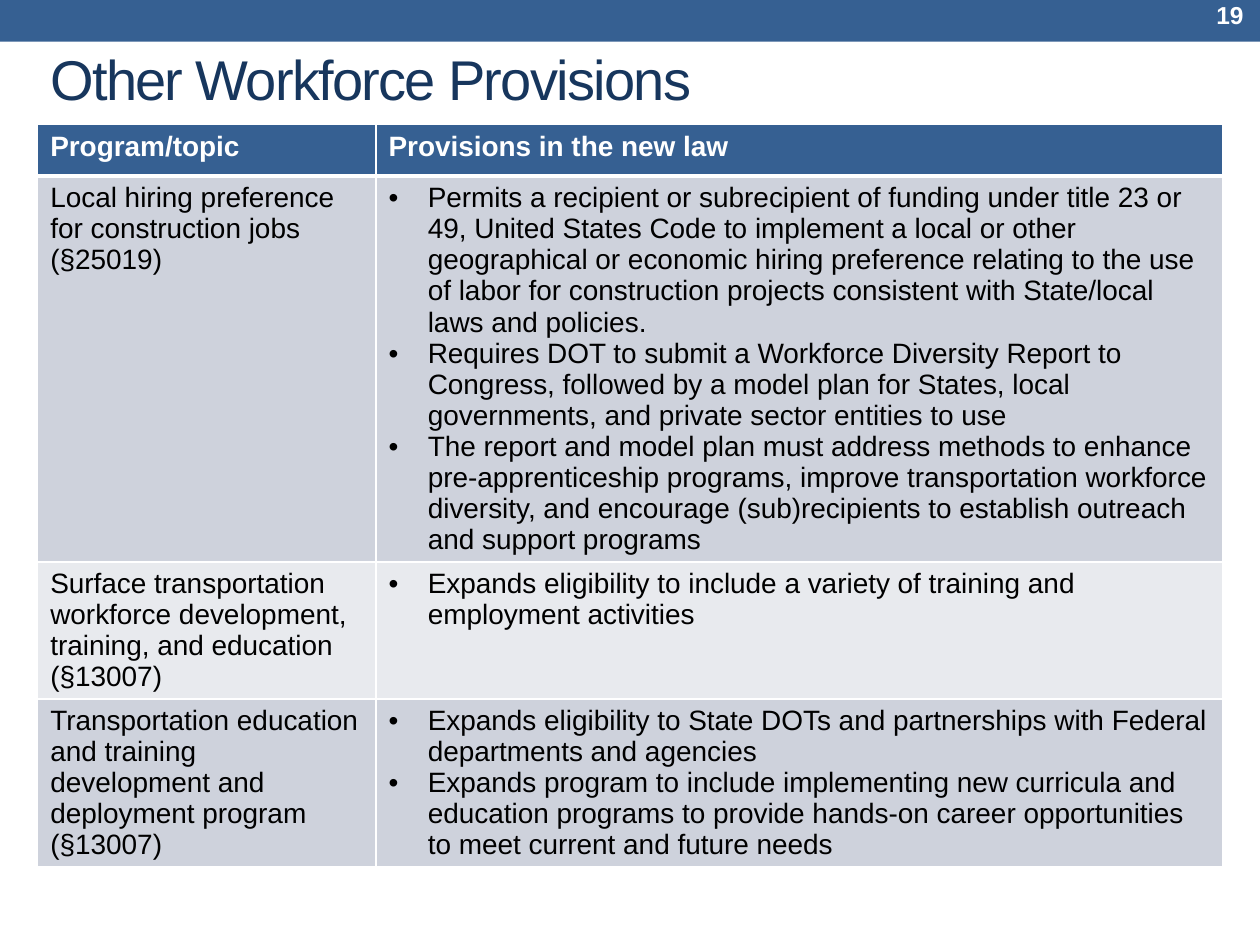
from lxml.etree import SubElement
from pptx import Presentation
from pptx.dml.color import RGBColor
from pptx.enum.shapes import MSO_SHAPE as Shape
from pptx.enum.text import MSO_ANCHOR as Anchor, MSO_AUTO_SIZE as AutoSize, PP_ALIGN as Align
from pptx.oxml.ns import qn
from pptx.util import Cm, Pt

FONT = "Arial"
BLUE, NAVY, WHITE, BLACK = "366092", "17365D", "FFFFFF", "000000"
BANDS = ["CED2DC", "E8EAEE"]
COLUMN_WIDTHS = [6.82, 17.06]
ROW_HEIGHT = 1.04
BULLET_INDENT = Cm(0.79)

HEADINGS = ["Program/topic", "Provisions in the new law"]
# Each program: name, section of the law, provisions
PROGRAMS = [
    ("Local hiring preference for construction jobs", "(§25019)", [
        "Permits a recipient or subrecipient of funding under title 23 or 49, United States Code "
        "to implement a local or other geographical or economic hiring preference relating to the "
        "use of labor for construction projects consistent with State/local laws and policies.",
        "Requires DOT to submit a Workforce Diversity Report to Congress, followed by a model plan "
        "for States, local governments, and private sector entities to use",
        "The report and model plan must address methods to enhance pre-apprenticeship programs, "
        "improve transportation workforce diversity, and encourage (sub)recipients to establish "
        "outreach and support programs",
    ]),
    ("Surface transportation workforce development, training, and education", "(§13007)", [
        "Expands eligibility to include a variety of training and employment activities",
    ]),
    ("Transportation education and training development and deployment program", "(§13007)", [
        "Expands eligibility to State DOTs and partnerships with Federal departments and agencies",
        "Expands program to include implementing new curricula and education programs to provide "
        "hands-on career opportunities to meet current and future needs",
    ]),
]


def color(value):
    return RGBColor.from_string(value)


def style(paragraph, size, ink, bold=False, align=Align.LEFT):
    paragraph.alignment = align
    font = paragraph.font
    font.name, font.size, font.bold = FONT, Pt(size), bold
    font.color.rgb = color(ink)


def add_bullet(paragraph):
    props = paragraph._p.get_or_add_pPr()
    props.set("marL", str(BULLET_INDENT))
    props.set("indent", str(-BULLET_INDENT))
    # Bullet marks come before the default run properties
    bullet_font = props.makeelement(qn("a:buFont"), {"typeface": FONT})
    bullet_char = props.makeelement(qn("a:buChar"), {"char": "•"})
    props.insert(0, bullet_font)
    bullet_font.addnext(bullet_char)


def add_borders(cell, widths):
    props = cell._tc.get_or_add_tcPr()
    for side, width in zip(("lnL", "lnR", "lnT", "lnB"), widths):
        line = SubElement(props, qn(f"a:{side}"), w=str(Pt(width)))
        fill = SubElement(line, qn("a:solidFill"))
        SubElement(fill, qn("a:srgbClr"), val=WHITE)


def fill_cell(cell, lines, fill, ink=BLACK, bold=False, bulleted=False, borders=(1, 1, 1, 1)):
    add_borders(cell, borders)
    cell.fill.solid()
    cell.fill.fore_color.rgb = color(fill)
    cell.text_frame.text = "\n".join(lines)
    for paragraph in cell.text_frame.paragraphs:
        style(paragraph, 16, ink, bold)
        if bulleted:
            add_bullet(paragraph)


def add_banner(slide):
    banner = slide.shapes.add_shape(Shape.RECTANGLE, 0, Cm(-0.18), Cm(25.4), Cm(1.02))
    banner.shadow.inherit = False
    banner.fill.solid()
    banner.fill.fore_color.rgb = color(BLUE)
    banner.line.fill.background()


def add_page_number(slide, number):
    box = slide.shapes.add_textbox(Cm(22.35), Cm(-0.15), Cm(2.97), Cm(0.91))
    frame = box.text_frame
    frame.word_wrap = True
    frame.vertical_anchor = Anchor.MIDDLE
    frame.text = number
    style(frame.paragraphs[0], 14, WHITE, True, Align.RIGHT)


def set_title(slide, text):
    title = slide.shapes.title
    title.left, title.top, title.width, title.height = Cm(0.76), Cm(0.66), Cm(17.2), Cm(1.85)
    frame = title.text_frame
    frame.auto_size = AutoSize.NONE
    frame.vertical_anchor = Anchor.MIDDLE
    frame.text = text
    heading = frame.paragraphs[0]
    style(heading, 32, NAVY)
    heading.runs[0].font._element.set("spc", "-100")


def add_provisions_table(slide):
    row_count = len(PROGRAMS) + 1
    table = slide.shapes.add_table(row_count, len(HEADINGS), Cm(0.76), Cm(2.51),
                                   Cm(sum(COLUMN_WIDTHS)), Cm(ROW_HEIGHT * row_count)).table
    for column, width in zip(table.columns, COLUMN_WIDTHS):
        column.width = Cm(width)
    for row in table.rows:
        row.height = Cm(ROW_HEIGHT)

    for index, heading in enumerate(HEADINGS):
        fill_cell(table.cell(0, index), [heading], BLUE, WHITE, bold=True, borders=(1, 1, 1, 3))
    for index, (program, section, provisions) in enumerate(PROGRAMS):
        band = BANDS[index % 2]
        # The first program shares its top edge with the heavy heading rule
        borders = (1, 1, 1 if index else 3, 1)
        fill_cell(table.cell(index + 1, 0), [program, section], band, borders=borders)
        fill_cell(table.cell(index + 1, 1), provisions, band, bulleted=True, borders=borders)


def main():
    deck = Presentation()
    deck.slide_width, deck.slide_height = Cm(25.4), Cm(19.05)
    slide = deck.slides.add_slide(deck.slide_layouts[5])
    add_banner(slide)
    set_title(slide, "Other Workforce Provisions")
    add_provisions_table(slide)
    add_page_number(slide, "19")
    deck.save("out.pptx")


if __name__ == "__main__":
    main()
